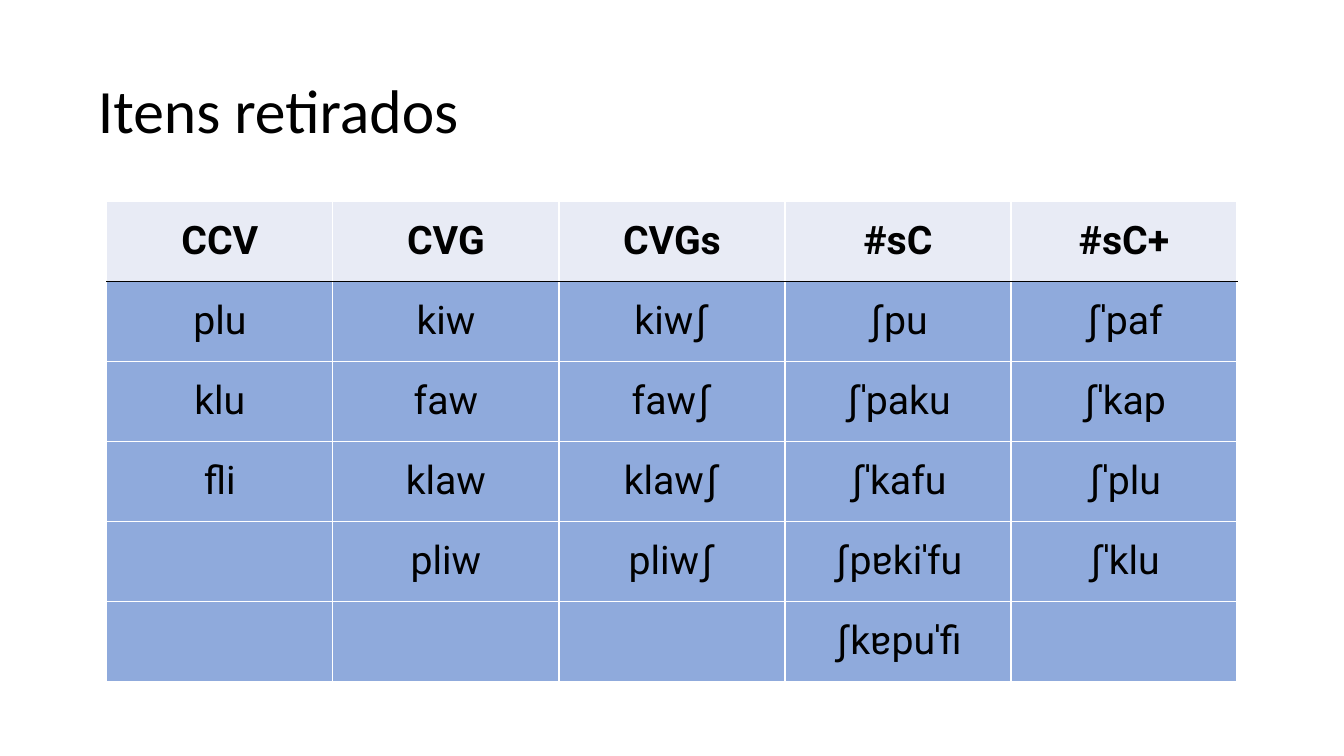
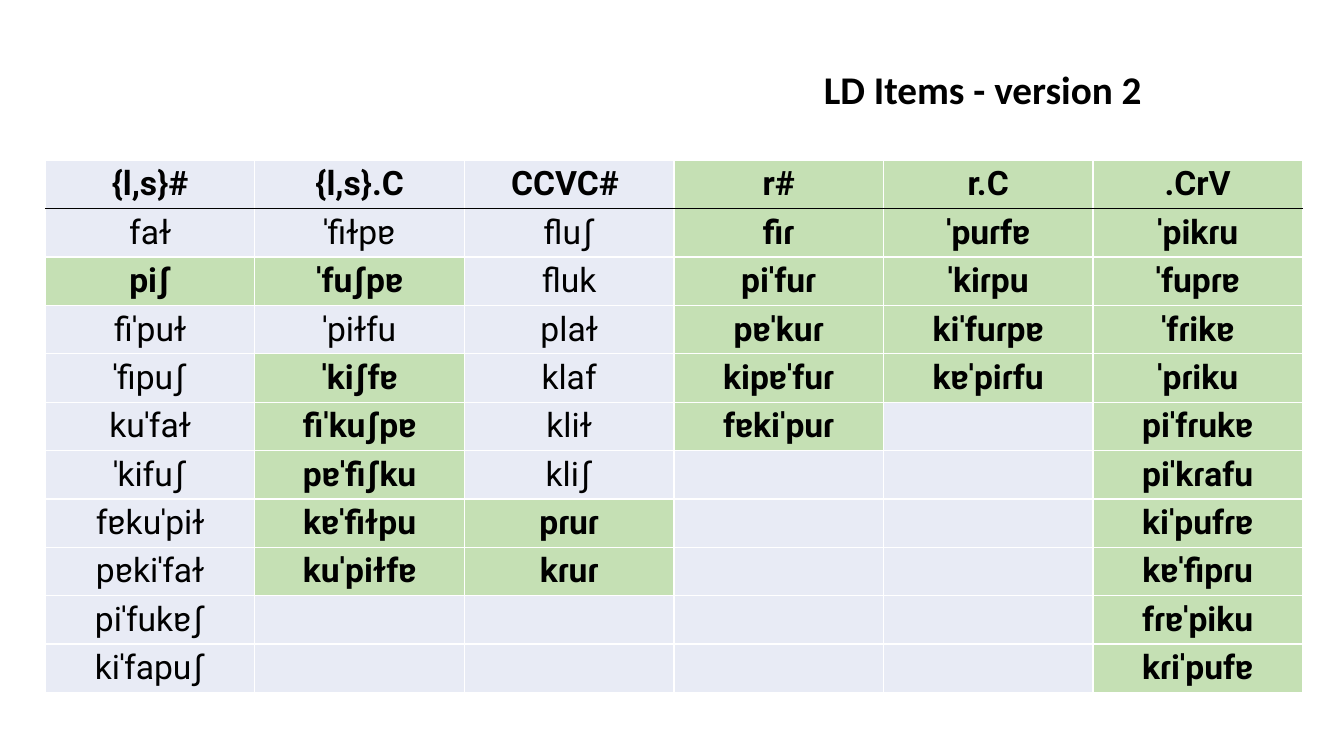
from itertools import zip_longest

from pptx import Presentation
from pptx.dml.color import RGBColor
from pptx.enum.text import MSO_ANCHOR as Anchor, MSO_AUTO_SIZE as AutoSize, PP_ALIGN as Align
from pptx.oxml import parse_xml
from pptx.oxml.ns import nsdecls
from pptx.util import Inches, Pt

# Shared style
BLACK = RGBColor(0x00, 0x00, 0x00)
PALE = RGBColor(0xE8, 0xEB, 0xF5)
BLUE = RGBColor(0x8F, 0xAA, 0xDC)
GREEN = RGBColor(0xC5, 0xE0, 0xB4)
TITLE_FONT = "Calibri"
TABLE_FONT = "Roboto"
TITLE_ONLY_LAYOUT = 5

# Each column is its header followed by its items
REMOVED_ITEMS = [
    ["CCV", "plu", "klu", "fli"],
    ["CVG", "kiw", "faw", "klaw", "pliw"],
    ["CVGs", "kiwʃ", "fawʃ", "klawʃ", "pliwʃ"],
    ["#sC", "ʃpu", "ʃˈpaku", "ʃˈkafu", "ʃpɐkiˈfu", "ʃkɐpuˈfi"],
    ["#sC+", "ʃˈpaf", "ʃˈkap", "ʃˈplu", "ʃˈklu"],
]
MIXED_COLUMNS = [
    ["{l,s}#", "faɫ", "piʃ", "fiˈpuɫ", "ˈfipuʃ", "kuˈfaɫ", "ˈkifuʃ",
     "fɐkuˈpiɫ", "pɐkiˈfaɫ", "piˈfukɐʃ", "kiˈfapuʃ"],
    ["{l,s}.C", "ˈfiɫpɐ", "ˈfuʃpɐ", "ˈpiɫfu", "ˈkiʃfɐ", "fiˈkuʃpɐ",
     "pɐˈfiʃku", "kɐˈfiɫpu", "kuˈpiɫfɐ"],
    ["CCVC# ", "fluʃ", "fluk", "plaɫ", "klaf", "kliɫ", "kliʃ", "pɾuɾ", "kɾuɾ"],
]
GREEN_COLUMNS = [
    ["r#", "fiɾ", "piˈfuɾ", "pɐˈkuɾ", "kipɐˈfuɾ", "fɐkiˈpuɾ"],
    ["r.C", "ˈpuɾfɐ", "ˈkiɾpu", "kiˈfuɾpɐ", "kɐˈpiɾfu"],
    [".CrV", "ˈpikɾu", "ˈfupɾɐ", "ˈfɾikɐ", "ˈpɾiku", "piˈfɾukɐ", "piˈkɾafu",
     "kiˈpufɾɐ", "kɐˈfipɾu", "fɾɐˈpiku", "kɾiˈpufɐ"],
]
# Highlighted items: chosen ones in the mixed columns, all of the green ones
HIGHLIGHTED = {"piʃ", "ˈfuʃpɐ", "ˈkiʃfɐ", "fiˈkuʃpɐ", "pɐˈfiʃku", "kɐˈfiɫpu",
               "kuˈpiɫfɐ", "pɾuɾ", "kɾuɾ"}.union(*GREEN_COLUMNS)


def add_span(para, text, font, size, bold):
    span = para.add_run()
    span.text = text
    span.font.name = font
    span.font.size = Pt(size)
    span.font.bold = bold
    span.font.color.rgb = BLACK


def add_title(page, text, box, size, bold=False, anchor=Anchor.MIDDLE, spacing=1.0):
    title = page.shapes.title
    title.left, title.top, title.width, title.height = map(Inches, box)
    frame = title.text_frame
    frame.word_wrap = True
    frame.auto_size = AutoSize.NONE
    frame.vertical_anchor = anchor
    frame.margin_left = frame.margin_right = Inches(0.05)
    frame.margin_top = frame.margin_bottom = Inches(0.05)
    para = frame.paragraphs[0]
    para.alignment = Align.LEFT
    para.line_spacing = spacing
    add_span(para, text, TITLE_FONT, size, bold)


def add_rule(cell, side):
    """Draw a black line on one side of a cell: lnT or lnB."""
    line = parse_xml(
        f'<a:{side} {nsdecls("a")} w="12700"><a:solidFill>'
        f'<a:srgbClr val="{BLACK}"/></a:solidFill></a:{side}>')
    cell._tc.get_or_add_tcPr().insert(0, line)


def format_cell(cell, text, size, bold, fill):
    cell.fill.solid()
    cell.fill.fore_color.rgb = fill
    cell.vertical_anchor = Anchor.MIDDLE
    cell.margin_left = cell.margin_right = Inches(0.01)
    cell.margin_top = cell.margin_bottom = Inches(0.01)
    if text:
        para = cell.text_frame.paragraphs[0]
        para.alignment = Align.CENTER
        add_span(para, text, TABLE_FONT, size, bold)


def add_item_table(page, columns, box, size, body_fill):
    rows = list(zip_longest(*columns, fillvalue=""))
    left, top, width, height = map(Inches, box)
    table = page.shapes.add_table(
        len(rows), len(columns), left, top, width, height).table
    table.horz_banding = False
    for r, words in enumerate(rows):
        for c, word in enumerate(words):
            cell = table.cell(r, c)
            marked = word in HIGHLIGHTED
            fill = GREEN if marked else body_fill if r else PALE
            format_cell(cell, word, size, marked or r == 0, fill)
            # One rule separates the header from the items
            if r < 2:
                add_rule(cell, "lnT" if r else "lnB")


def add_removed_items_page(deck):
    page = deck.slides.add_slide(deck.slide_layouts[TITLE_ONLY_LAYOUT])
    add_title(page, "Itens retirados", (0.92, 0.4, 11.5, 1.45), 44, spacing=0.9)
    add_item_table(page, REMOVED_ITEMS, (1.06, 2, 11.21, 4.76), 28, BLUE)


def add_version_page(deck):
    page = deck.slides.add_slide(deck.slide_layouts[TITLE_ONLY_LAYOUT])
    add_title(page, "LD Items - version 2", (8.12, 0.6, 4.79, 0.49), 28,
              bold=True, anchor=Anchor.TOP)
    add_item_table(page, MIXED_COLUMNS + GREEN_COLUMNS,
                   (0.45, 1.59, 12.47, 5.28), 24, PALE)


def main():
    deck = Presentation()
    deck.slide_width, deck.slide_height = Inches(13.33), Inches(7.5)
    add_removed_items_page(deck)
    add_version_page(deck)
    deck.save("out.pptx")


if __name__ == "__main__":
    main()
